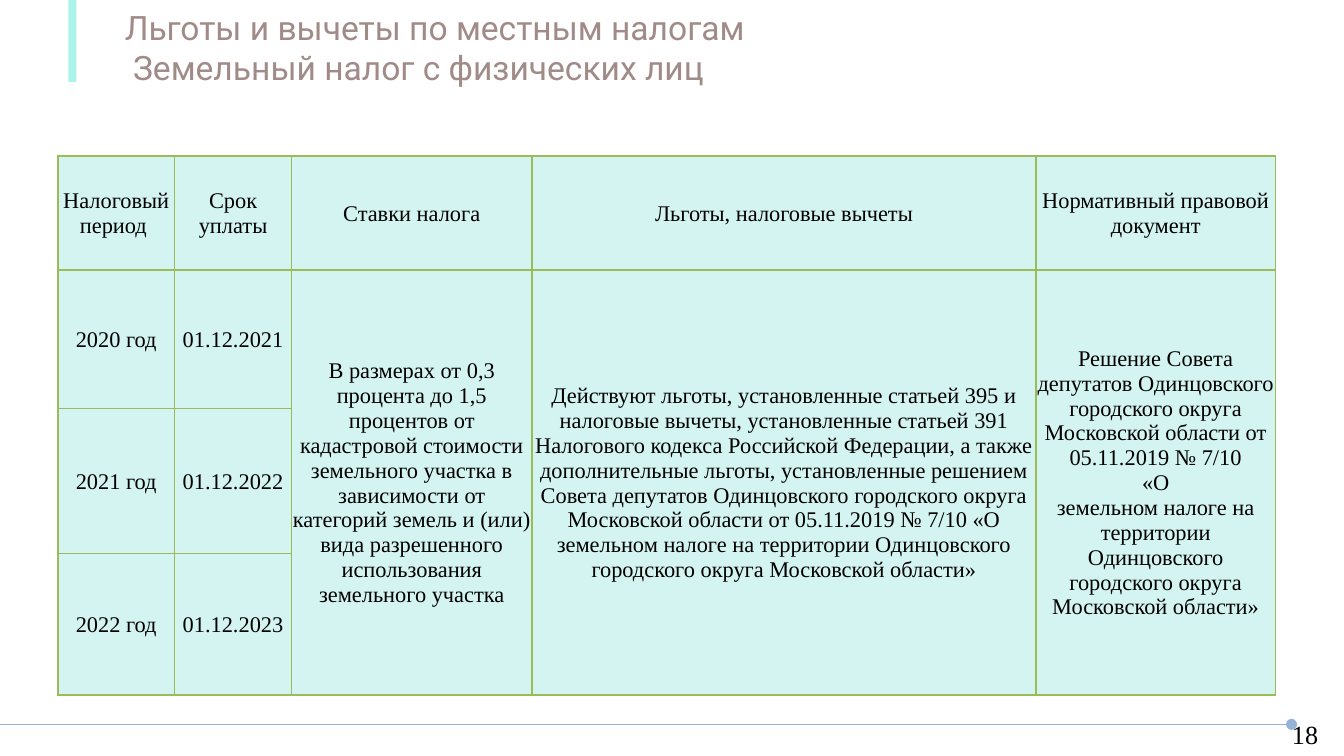
from dataclasses import dataclass

from lxml import etree
from pptx import Presentation
from pptx.dml.color import RGBColor
from pptx.enum import shapes, text
from pptx.oxml import ns
from pptx.util import Inches, Pt


@dataclass(frozen=True)
class Theme:
    title: str = "A08B88"
    accent: str = "ACF3EB"
    ink: str = "000000"
    cell: str = "D4F4F2"
    border: str = "9BBB59"
    rule: str = "95B3D7"
    title_font: str = "Roboto"
    body_font: str = "Times New Roman"
    title_size: int = 18
    body_size: int = 12
    number_size: int = 14


THEME = Theme()
COLS = [0.87, 0.87, 1.79, 3.75, 1.78]
ROWS = [0.85, 1.03, 1.08, 1.05]
HEADERS = ["Налоговый период ", "Срок уплаты", "Ставки налога",
           "Льготы, налоговые вычеты", "Нормативный правовой документ"]
PERIODS = [("2020 год", "01.12.2021"), ("2021 год", "01.12.2022"),
           ("2022 год", "01.12.2023")]
TERMS = [
    "В размерах от 0,3 процента до 1,5 процентов от кадастровой стоимости "
    "земельного участка в зависимости от категорий земель и (или) вида "
    "разрешенного использования земельного участка",
    "Действуют льготы, установленные статьей 395 и налоговые вычеты, "
    "установленные статьей 391 Налогового кодекса Российской Федерации, а также "
    "дополнительные льготы, установленные решением Совета депутатов Одинцовского "
    "городского округа Московской области от 05.11.2019 № 7/10 «О земельном налоге "
    "на территории Одинцовского городского округа Московской области»",
    "Решение Совета депутатов Одинцовского городского округа Московской области от "
    "05.11.2019 № 7/10\n«О\nземельном налоге на территории Одинцовского городского "
    "округа Московской области»",
]


def rgb(value):
    return RGBColor.from_string(value)


def write(p, words, size=THEME.body_size, font=THEME.body_font, color=THEME.ink,
          align=text.PP_ALIGN.CENTER):
    """Fill a paragraph; a newline in words becomes a line break."""
    p.alignment = align
    for i, line in enumerate(words.split("\n")):
        if i:
            p.add_line_break()
        r = p.add_run()
        r.text = line
        r.font.name, r.font.size = font, Pt(size)
        r.font.color.rgb = rgb(color)


def add_title(s, x, y, w, h, lines):
    bar = s.shapes.add_shape(shapes.MSO_SHAPE.RECTANGLE, Inches(x), Inches(y - 0.01),
                             Inches(0.06), Inches(0.62))
    bar.shadow.inherit = False
    bar.fill.solid()
    bar.fill.fore_color.rgb = rgb(THEME.accent)
    bar.line.fill.background()

    indent = 0.32
    tf = s.shapes.add_textbox(Inches(x + indent), Inches(y), Inches(w - indent),
                              Inches(h)).text_frame
    tf.word_wrap = True
    for i, line in enumerate(lines):
        p = tf.add_paragraph() if i else tf.paragraphs[0]
        write(p, line, THEME.title_size, THEME.title_font, THEME.title,
              text.PP_ALIGN.LEFT)


def style_cell(cell):
    cell.vertical_anchor = text.MSO_ANCHOR.MIDDLE
    cell.margin_left = cell.margin_right = cell.margin_top = Inches(0.01)
    cell.margin_bottom = 0
    tcPr = cell._tc.get_or_add_tcPr()
    for side in ("a:lnL", "a:lnR", "a:lnT", "a:lnB"):
        ln = etree.SubElement(tcPr, ns.qn(side), w=str(Pt(1)))
        fill = etree.SubElement(ln, ns.qn("a:solidFill"))
        etree.SubElement(fill, ns.qn("a:srgbClr"), val=THEME.border)
    cell.fill.solid()
    cell.fill.fore_color.rgb = rgb(THEME.cell)


def add_tax_table(s, x, y):
    table = s.shapes.add_table(len(ROWS), len(COLS), Inches(x), Inches(y),
                               Inches(sum(COLS)), Inches(sum(ROWS))).table
    table.first_row = table.horz_banding = False
    for col, width in zip(table.columns, COLS):
        col.width = Inches(width)
    for row, height in zip(table.rows, ROWS):
        row.height = Inches(height)
    for cell in table.iter_cells():
        style_cell(cell)

    first_term = len(COLS) - len(TERMS)
    for c in range(first_term, len(COLS)):
        table.cell(1, c).merge(table.cell(len(ROWS) - 1, c))
    grid = [HEADERS, [*PERIODS[0], *TERMS], *PERIODS[1:]]
    for r, row in enumerate(grid):
        for c, words in enumerate(row):
            write(table.cell(r, c).text_frame.paragraphs[0], words)


def add_footer(s, x, y, w, h, number):
    """Draw a rule ending in a dot, with the page number at the right end."""
    box_w = 0.44
    end = x + w - box_w + 0.12
    rule = s.shapes.add_connector(shapes.MSO_CONNECTOR.STRAIGHT, Inches(x),
                                  Inches(y), Inches(end), Inches(y))
    rule.line.color.rgb = rgb(THEME.rule)
    rule.line.width = Pt(0.75)
    etree.SubElement(rule.line._get_or_add_ln(), ns.qn("a:tailEnd"), type="oval")
    etree.SubElement(rule._element.spPr, ns.qn("a:effectLst"))

    tf = s.shapes.add_textbox(Inches(x + w - box_w), Inches(y - 0.04),
                              Inches(box_w), Inches(h)).text_frame
    tf.word_wrap = True
    tf.vertical_anchor = text.MSO_ANCHOR.MIDDLE
    write(tf.paragraphs[0], number, THEME.number_size)


def main():
    prs = Presentation()
    prs.slide_width = Inches(10)
    prs.slide_height = prs.slide_width * 9 // 16
    s = prs.slides.add_slide(prs.slide_layouts[6])
    add_footer(s, 0, 5.39, 9.93, 0.22, "18")
    add_title(s, 0.51, 0, 7.3, 0.71, ["Льготы и вычеты по местным налогам",
                                      " Земельный налог с физических лиц"])
    add_tax_table(s, 0.43, 1.16)
    prs.save("out.pptx")


if __name__ == "__main__":
    main()
